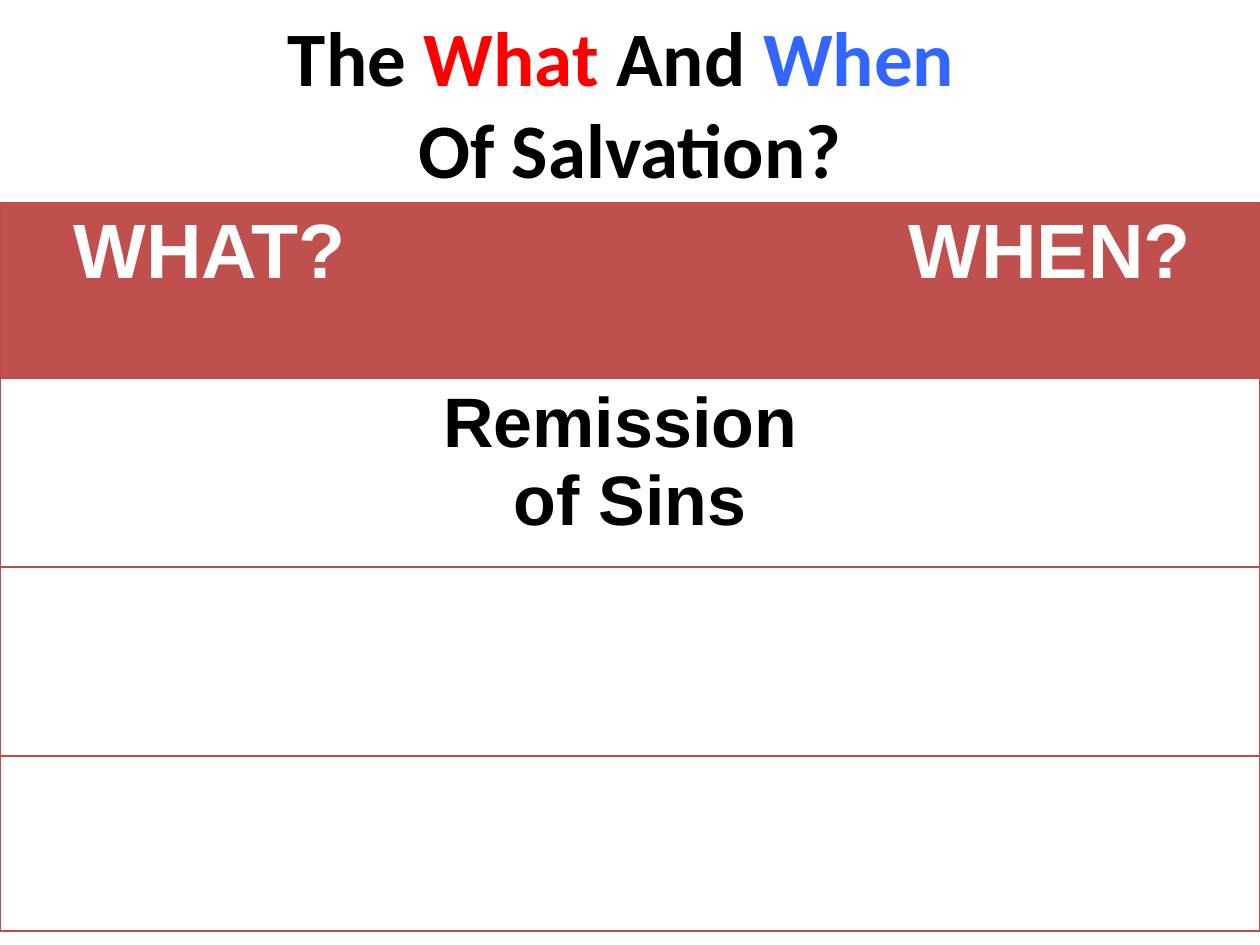
from lxml import etree
from pptx import Presentation
from pptx.dml.color import RGBColor
from pptx.enum.text import MSO_ANCHOR, PP_ALIGN
from pptx.oxml.ns import qn
from pptx.util import Inches, Pt

CENTER = PP_ALIGN.CENTER
MIDDLE = MSO_ANCHOR.MIDDLE
BLACK = RGBColor(0, 0, 0)
WHITE = RGBColor(255, 255, 255)
RED = RGBColor(255, 0, 0)
BLUE = RGBColor(0x33, 0x66, 0xFF)
BRICK = RGBColor(0xC0, 0x50, 0x4D)
EDGE = RGBColor(0xBF, 0x4C, 0x48)
NO_GRID = "{2D5ABB26-0587-4C30-8999-92F81FD0307C}"


def add_run(para, text, face, size, color):
    run = para.add_run()
    run.text = text
    font = run.font
    font.name, font.size, font.bold = face, Pt(size), True
    font.color.rgb = color


def add_edge(cell, side):
    """Draw a thin line on one side (L, R, T or B) of a cell."""
    props = cell._tc.get_or_add_tcPr()
    line = etree.SubElement(props, qn(f"a:ln{side}"), w=str(Pt(0.75)))
    fill = etree.SubElement(line, qn("a:solidFill"))
    etree.SubElement(fill, qn("a:srgbClr"), val=str(EDGE))


prs = Presentation()
prs.slide_width, prs.slide_height = Inches(10), Inches(7.5)
wide = prs.slide_width
slide = prs.slides.add_slide(prs.slide_layouts[5])

# Title
top = Inches(1.61)
title = slide.shapes.title
title.left, title.top = int(wide * 0.075), 0
title.width, title.height = int(wide * 0.85), top
frame = title.text_frame
frame.word_wrap = True
frame.vertical_anchor = MIDDLE
para = frame.paragraphs[0]
para.alignment = CENTER
for text, color in [("The ", BLACK), ("What", RED), (" And ", BLACK), ("When ", BLUE)]:
    add_run(para, text, "Calibri", 44, color)
para.add_line_break()
add_run(para, "Of Salvation?", "Calibri", 44, BLACK)

# Table
tall = [1.39, 1.5, 1.5, 1.39]
cols, last = 3, len(tall) - 1
frame = slide.shapes.add_table(len(tall), cols, 0, top, wide, Inches(sum(tall)))
table = frame.table
table._tbl.tblPr.find(qn("a:tableStyleId")).text = NO_GRID
for col in table.columns:
    col.width = wide // cols
for row, high in zip(table.rows, tall):
    row.height = Inches(high)

words = {
    (0, 0): ["WHAT?"],
    (0, 2): ["WHEN?"],
    (1, 1): ["Remission ", "of Sins"],
}
for r in range(len(tall)):
    size, color = (44, WHITE) if r == 0 else (40, BLACK)
    for c in range(cols):
        cell = table.cell(r, c)
        if c == 0:
            add_edge(cell, "L")
        if c == cols - 1:
            add_edge(cell, "R")
        add_edge(cell, "T")
        if r == last:
            add_edge(cell, "B")
        if r == 0:
            cell.fill.solid()
            cell.fill.fore_color.rgb = BRICK
        else:
            cell.fill.background()
        for i, text in enumerate(words.get((r, c), [])):
            body = cell.text_frame
            para = body.add_paragraph() if i else body.paragraphs[0]
            para.alignment = CENTER
            add_run(para, text, "Arial", size, color)

prs.save("out.pptx")
